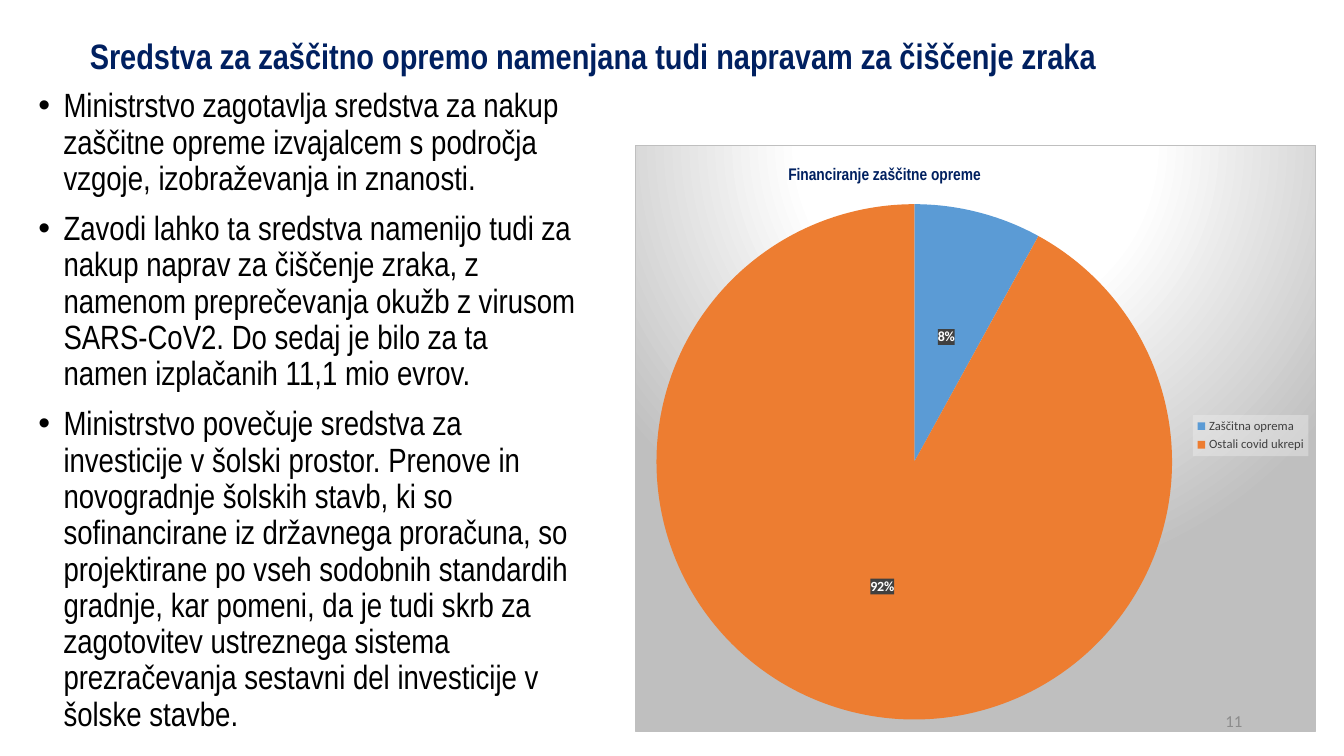
from dataclasses import dataclass

from lxml import etree
from pptx import Presentation
from pptx.chart.chart import Chart
from pptx.chart.data import CategoryChartData
from pptx.dml.color import RGBColor
from pptx.enum.chart import XL_CHART_TYPE, XL_LABEL_POSITION, XL_LEGEND_POSITION
from pptx.enum.text import MSO_ANCHOR, MSO_AUTO_SIZE, PP_ALIGN
from pptx.oxml import parse_xml
from pptx.oxml.ns import nsdecls, qn
from pptx.util import Inches, Pt

PIE = XL_CHART_TYPE.PIE
LABEL_CENTER = XL_LABEL_POSITION.CENTER
LEGEND_RIGHT = XL_LEGEND_POSITION.RIGHT
MIDDLE, TOP = MSO_ANCHOR.MIDDLE, MSO_ANCHOR.TOP
NO_AUTOFIT = MSO_AUTO_SIZE.NONE
LEFT, RIGHT = PP_ALIGN.LEFT, PP_ALIGN.RIGHT


@dataclass(frozen=True)
class TextStyle:
    font: str
    size: float
    color: str
    bold: bool = False


@dataclass(frozen=True)
class Theme:
    title: TextStyle = TextStyle("Arial Narrow", 25.2, "002060", True)
    body: TextStyle = TextStyle("Arial Narrow", 24, "000000")
    number: TextStyle = TextStyle("Calibri", 12, "8C8C8C")
    chart: TextStyle = TextStyle("Calibri", 10, "000000")
    chart_title: TextStyle = TextStyle("Arial Narrow", 12, "002060", True)
    legend: TextStyle = TextStyle("Calibri", 9, "404040")
    label: TextStyle = TextStyle("Calibri", 10, "FFFFFF", True)
    label_fill: str = "404040"
    legend_fill: str = "F2F2F2"
    gradient_start: str = "FFFFFF"
    gradient_end: str = "BFBFBF"


@dataclass(frozen=True)
class Box:
    left: float
    top: float
    width: float
    height: float

    def lengths(self) -> tuple:
        return tuple(map(Inches, (self.left, self.top, self.width, self.height)))


@dataclass(frozen=True)
class Slice:
    name: str
    percent: int
    color: str


THEME = Theme()
TITLE = "Sredstva za zaščitno opremo namenjana tudi napravam za čiščenje zraka"
BULLETS = (
    "Ministrstvo zagotavlja sredstva za nakup zaščitne opreme izvajalcem s področja "
    "vzgoje, izobraževanja in znanosti.",
    "Zavodi lahko ta sredstva namenijo tudi za nakup naprav za čiščenje zraka, z namenom "
    "preprečevanja okužb z virusom SARS-CoV2. Do sedaj je bilo za ta namen izplačanih "
    "11,1 mio evrov.",
    "Ministrstvo povečuje sredstva za investicije v šolski prostor. Prenove in novogradnje "
    "šolskih stavb, ki so sofinancirane iz državnega proračuna, so projektirane po vseh "
    "sodobnih standardih gradnje, kar pomeni, da je tudi skrb za zagotovitev ustreznega "
    "sistema prezračevanja sestavni del investicije v šolske stavbe.",
)
CHART_TITLE = "Financiranje zaščitne opreme"
SLICES = (
    Slice("Zaščitna oprema", 8, "5B9BD5"),
    Slice("Ostali covid ukrepi", 92, "ED7D31"),
)


def style_font(font, style: TextStyle) -> None:
    font.name = style.font
    font.size = Pt(style.size)
    font.bold = style.bold
    font.color.rgb = RGBColor.from_string(style.color)


def write_text(shape, box: Box, texts: tuple, style: TextStyle, anchor, alignment) -> None:
    shape.left, shape.top, shape.width, shape.height = box.lengths()
    frame = shape.text_frame
    frame.text = "\n".join(texts)
    frame.word_wrap = True
    frame.auto_size = NO_AUTOFIT
    frame.vertical_anchor = anchor
    for paragraph in frame.paragraphs:
        paragraph.alignment = alignment
        style_font(paragraph.font, style)


def format_bullets(shape) -> None:
    for paragraph in shape.text_frame.paragraphs:
        paragraph.line_spacing = 0.9
        paragraph.space_before = Pt(10)
        properties = paragraph._p.get_or_add_pPr()
        properties.set("marL", str(Inches(0.25)))
        properties.set("indent", str(Inches(-0.25)))
        etree.SubElement(properties, qn("a:buFont")).set("typeface", "Arial")
        etree.SubElement(properties, qn("a:buChar")).set("char", "•")
        # Bullets precede the default run properties in the schema
        properties.append(properties.find(qn("a:defRPr")))


def manual_layout(parent, position: int, fractions: dict, inner: bool = False) -> None:
    """Place a chart part at fractions of the chart area."""
    for previous in parent.findall(qn("c:layout")):
        parent.remove(previous)
    settings = {"layoutTarget": "inner"} if inner else {}
    settings |= {"xMode": "edge", "yMode": "edge"} | fractions
    layout = etree.Element(qn("c:layout"))
    manual = etree.SubElement(layout, qn("c:manualLayout"))
    for name, value in settings.items():
        etree.SubElement(manual, qn(f"c:{name}")).set("val", str(value))
    parent.insert(position, layout)


def shape_properties(content: str):
    return parse_xml(f'<c:spPr {nsdecls("c", "a")}>{content}</c:spPr>')


def translucent_fill(color: str, percent: int):
    return shape_properties(
        f'<a:solidFill><a:srgbClr val="{color}"><a:alpha val="{percent * 1000}"/>'
        "</a:srgbClr></a:solidFill>"
    )


def fill_chart_area(chart: Chart, theme: Theme) -> None:
    stops = ((0, theme.gradient_start), (39, theme.gradient_start), (100, theme.gradient_end))
    stop_xml = "".join(
        f'<a:gs pos="{position * 1000}"><a:srgbClr val="{color}"/></a:gs>'
        for position, color in stops
    )
    area = shape_properties(
        f'<a:gradFill><a:gsLst>{stop_xml}</a:gsLst><a:path path="circle">'
        '<a:fillToRect l="50000" t="-80000" r="50000" b="180000"/></a:path></a:gradFill>'
        f'<a:ln w="{Pt(0.75)}"><a:solidFill><a:srgbClr val="{theme.gradient_end}"/>'
        "</a:solidFill></a:ln>"
    )
    chart._chartSpace.find(qn("c:chart")).addnext(area)


def add_funding_chart(slide, box: Box, theme: Theme) -> None:
    data = CategoryChartData()
    data.categories = [part.name for part in SLICES]
    data.add_series("Series 1", [part.percent for part in SLICES])
    chart = slide.shapes.add_chart(PIE, *box.lengths(), data).chart
    style_font(chart.font, theme.chart)
    fill_chart_area(chart, theme)

    # Chart title
    chart.has_title = True
    chart.chart_title.include_in_layout = False
    title_frame = chart.chart_title.text_frame
    title_frame.text = CHART_TITLE
    style_font(title_frame.paragraphs[0].font, theme.chart_title)
    manual_layout(chart.chart_title._element, 1, {"x": 0.22, "y": 0.03})

    # Pie slices and percentages
    plot = chart.plots[0]
    plot.vary_by_categories = True
    for index, part in enumerate(SLICES):
        fill = plot.series[0].points[index].format.fill
        fill.solid()
        fill.fore_color.rgb = RGBColor.from_string(part.color)
    labels = plot.series[0].data_labels
    style_font(labels.font, theme.label)
    labels.show_percentage = True
    labels.show_value = False
    labels.number_format = "0%"
    labels.number_format_is_linked = False
    labels.position = LABEL_CENTER
    label_fill = translucent_fill(theme.label_fill, 90)
    labels._element.find(qn("c:txPr")).addprevious(label_fill)
    plot_area = chart._chartSpace.find(qn("c:chart")).find(qn("c:plotArea"))
    manual_layout(plot_area, 0, {"x": 0.03, "y": 0.1, "w": 0.76, "h": 0.88}, inner=True)

    # Legend
    chart.has_legend = True
    legend = chart.legend
    legend.position = LEGEND_RIGHT
    legend.include_in_layout = False
    style_font(legend.font, theme.legend)
    manual_layout(legend._element, 1, {"x": 0.82, "y": 0.46, "w": 0.17, "h": 0.07})
    legend_fill = translucent_fill(theme.legend_fill, 39)
    legend._element.find(qn("c:txPr")).addprevious(legend_fill)


def main() -> None:
    presentation = Presentation()
    presentation.slide_width, presentation.slide_height = Inches(13.33), Inches(7.5)
    slide = presentation.slides.add_slide(presentation.slide_layouts[1])

    # Title and list
    title, body = slide.shapes.title, slide.placeholders[1]
    write_text(title, Box(0.79, 0.2, 10.67, 0.76), (TITLE,), THEME.title, MIDDLE, LEFT)
    title.text_frame.paragraphs[0].line_spacing = 0.9
    write_text(body, Box(0.28, 0.83, 5.53, 4.84), BULLETS, THEME.body, TOP, LEFT)
    format_bullets(body)

    # Chart and slide number
    add_funding_chart(slide, Box(6.3, 1.44, 6.75, 5.82), THEME)
    number_box = Box(9.42, 6.95, 3, 0.4)
    number = slide.shapes.add_textbox(*number_box.lengths())
    write_text(number, number_box, ("11",), THEME.number, MIDDLE, RIGHT)

    presentation.save("out.pptx")


if __name__ == "__main__":
    main()
